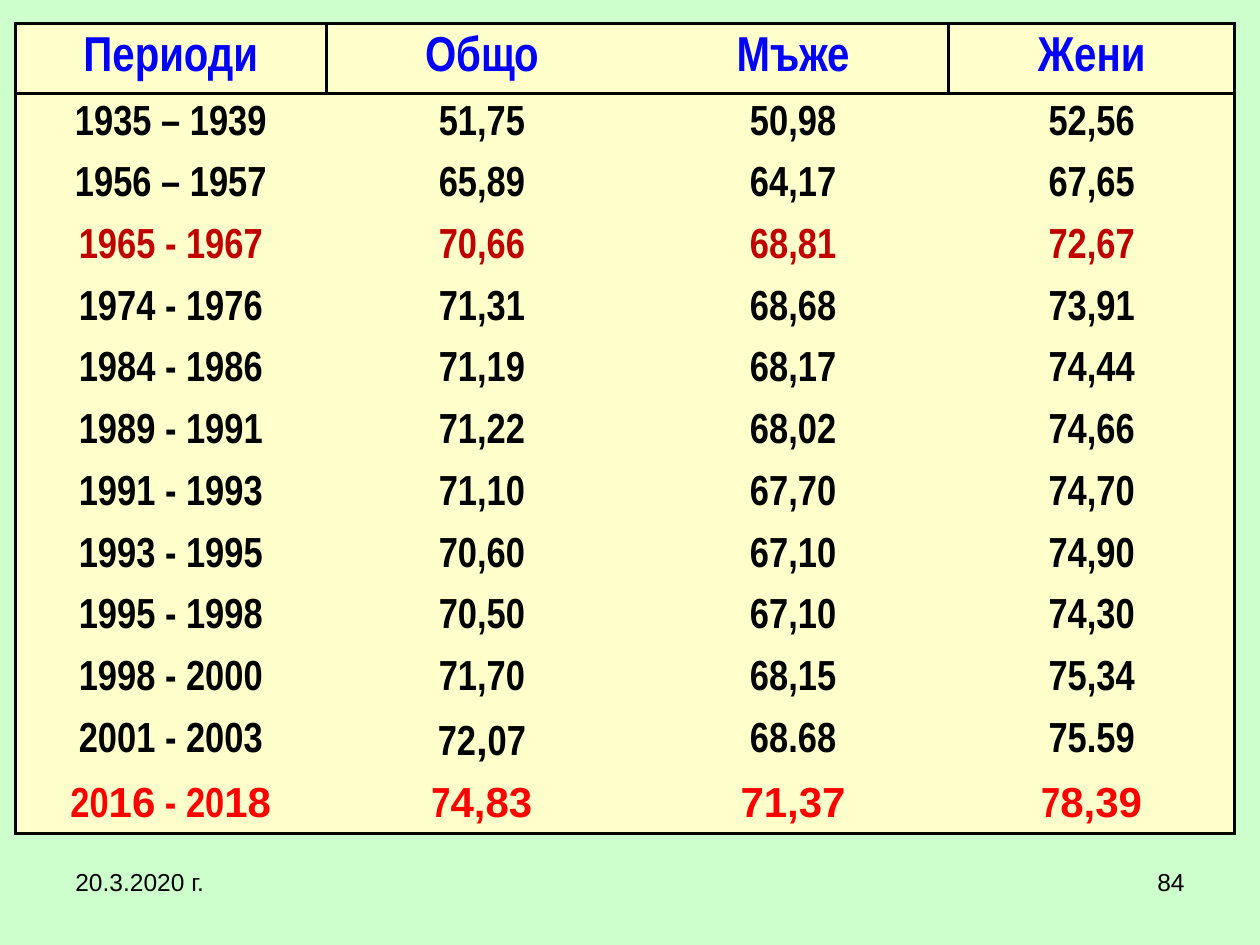
"""Build a slide with a table of life expectancy by period and sex."""
from dataclasses import dataclass
from itertools import cycle

from lxml import etree
from pptx import Presentation
from pptx import util as u
from pptx.dml.color import RGBColor
from pptx.enum import text
from pptx.oxml.ns import qn

COLORS = {"page": "CCFFCC", "cell": "FFFFCC", "ink": "000000",
          "header": "0000FF", "dark_red": "C00000", "red": "FF0000"}
NARROW, WIDE = "Arial Narrow", "Arial"
COLUMN_WIDTHS = (2.47, 2.47, 2.47, 2.27)
HEADER_HEIGHT, ROW_HEIGHT = 0.55, 0.49
RULE_WIDTH = 2
SWITCH = "|"


@dataclass
class Row:
    """Cell texts, where each SWITCH changes between the narrow and wide font."""
    cells: tuple[str, ...]
    color: str = "ink"
    size: int = 24


@dataclass
class Footer:
    """A short footer text, its left edge in inches and its alignment."""
    words: str
    left: float
    align: text.PP_ALIGN


ROWS = [
    Row(("Периоди", "Общо", "Мъже", "Жени"), "header", 28),
    Row(("1935 – 1939", "51,75", "50,98", "52,56")),
    Row(("1956 – 1957", "65,89", "64,17", "67,65")),
    Row(("1965 - 1967", "70,66", "68,81", "72,67"), "dark_red"),
    Row(("1974 - 1976", "71,31", "68,68", "73,91")),
    Row(("1984 - 1986", "71,19", "68,17", "74,44")),
    Row(("1989 - 1991", "71,22", "68,02", "74,66")),
    Row(("1991 - 1993", "71,10", "67,70", "74,70")),
    Row(("1993 - 1995", "70,60", "67,10", "74,90")),
    Row(("1995 - 1998", "70,50", "67,10", "74,30")),
    Row(("1998 - 2000", "71,70", "68,15", "75,34")),
    Row(("2001 - 2003", "72|,|07", "68.68", "75.59")),
    Row(("20|16| - 20|18", "7|4,83", "|71,37", "7|8,39"), "red"),
]
FOOTERS = [Footer("20.3.2020 г.", 0.5, text.PP_ALIGN.LEFT),
           Footer("84", 7.17, text.PP_ALIGN.RIGHT)]


def add_span(para, words: str, font: str, size: int, color: str, bold: bool) -> None:
    """Add one formatted run to a paragraph."""
    span = para.add_run()
    span.text = words
    span.font.name = font
    span.font.size = u.Pt(size)
    span.font.bold = bold
    span.font.color.rgb = RGBColor.from_string(COLORS[color])


def set_borders(cell, drawn: dict[str, bool]) -> None:
    """Draw the chosen cell edges and clear the others."""
    properties = cell._tc.get_or_add_tcPr()
    for position, (edge, visible) in enumerate(drawn.items()):
        line = etree.Element(qn(f"a:ln{edge}"), w=str(u.Pt(RULE_WIDTH)))
        if visible:
            fill = etree.SubElement(line, qn("a:solidFill"))
            etree.SubElement(fill, qn("a:srgbClr"), val=COLORS["ink"])
        else:
            etree.SubElement(line, qn("a:noFill"))
        properties.insert(position, line)


def fill_cell(cell, words: str, row: Row) -> None:
    """Set the fill, anchor and text of one table cell."""
    cell.fill.solid()
    cell.fill.fore_color.rgb = RGBColor.from_string(COLORS["cell"])
    cell.vertical_anchor = text.MSO_ANCHOR.MIDDLE
    para = cell.text_frame.paragraphs[0]
    para.alignment = text.PP_ALIGN.CENTER
    for part, font in zip(words.split(SWITCH), cycle((NARROW, WIDE))):
        if part:
            add_span(para, part, font, row.size, row.color, True)


def add_period_table(page) -> None:
    """Add the table, framed outside and around its header cells."""
    last_row, last_column = len(ROWS) - 1, len(COLUMN_WIDTHS) - 1
    height = HEADER_HEIGHT + ROW_HEIGHT * last_row
    table = page.shapes.add_table(
        len(ROWS), len(COLUMN_WIDTHS), u.Inches(0.12), u.Inches(0.19),
        u.Inches(sum(COLUMN_WIDTHS)), u.Inches(height)).table
    for column, width in zip(table.columns, COLUMN_WIDTHS):
        column.width = u.Inches(width)
    for r, row in enumerate(ROWS):
        is_header = r == 0
        table.rows[r].height = u.Inches(HEADER_HEIGHT if is_header else ROW_HEIGHT)
        for c, words in enumerate(row.cells):
            cell = table.cell(r, c)
            fill_cell(cell, words, row)
            set_borders(cell, {
                "L": c == 0 or (is_header and c in (1, last_column)),
                "R": c == last_column or (is_header and c in (0, last_column - 1)),
                "T": r <= 1,
                "B": r in (0, last_row),
            })


def add_footer(page, footer: Footer) -> None:
    """Add one footer text box."""
    box = page.shapes.add_textbox(
        u.Inches(footer.left), u.Inches(6.83), u.Inches(2.33), u.Inches(0.52))
    box.text_frame.word_wrap = True
    para = box.text_frame.paragraphs[0]
    para.alignment = footer.align
    add_span(para, footer.words, WIDE, 14, "ink", False)


def main() -> None:
    """Build and save the deck."""
    deck = Presentation()
    deck.slide_width, deck.slide_height = u.Inches(10), u.Inches(7.5)
    page = deck.slides.add_slide(deck.slide_layouts[6])
    page.background.fill.solid()
    page.background.fill.fore_color.rgb = RGBColor.from_string(COLORS["page"])
    add_period_table(page)
    for footer in FOOTERS:
        add_footer(page, footer)
    deck.save("out.pptx")


if __name__ == "__main__":
    main()
